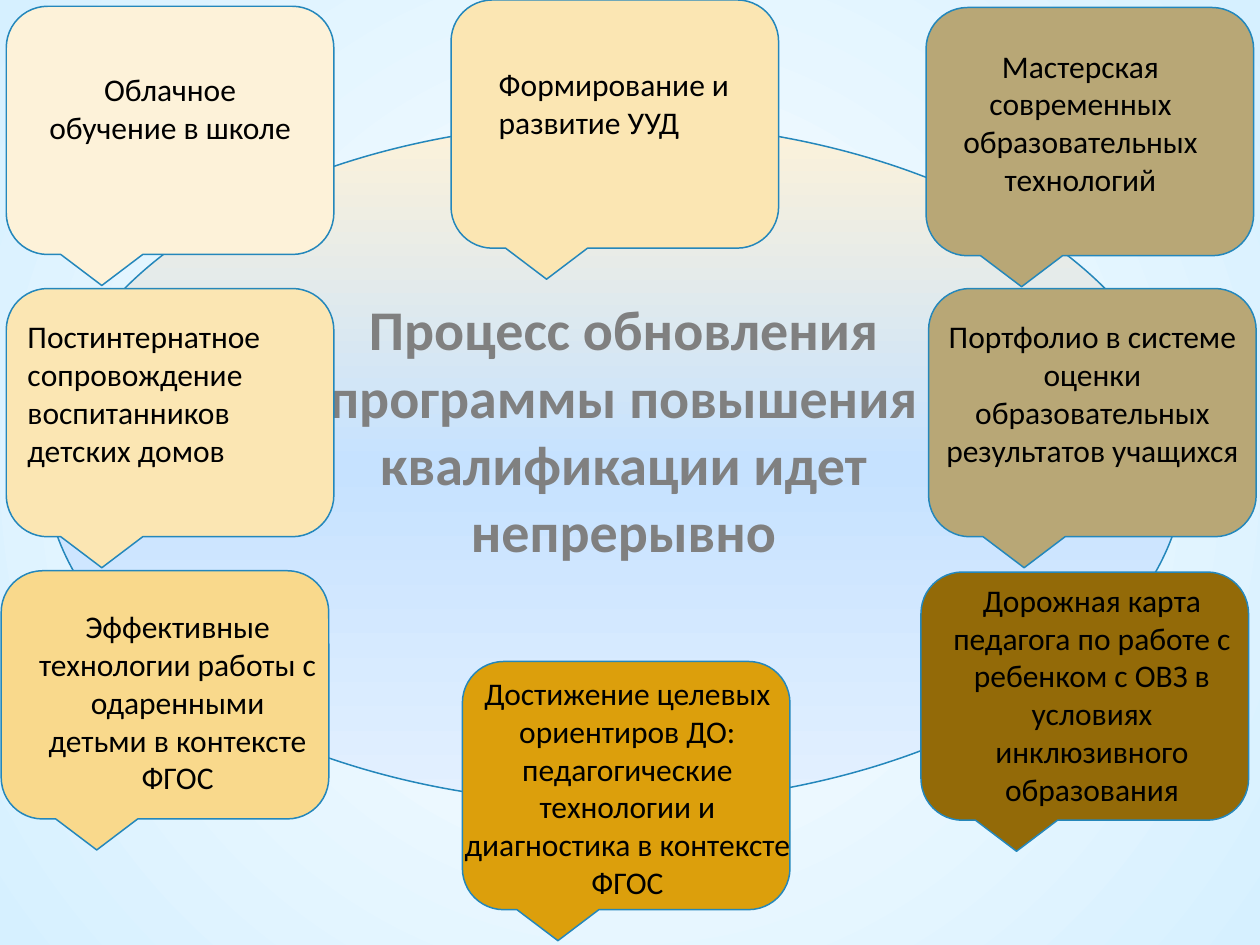
from lxml import etree
from pptx import Presentation
from pptx.dml.color import RGBColor
from pptx.enum.shapes import MSO_SHAPE
from pptx.enum.text import MSO_ANCHOR, MSO_AUTO_SIZE, PP_ALIGN
from pptx.oxml.ns import qn
from pptx.util import Pt

ELLIPSE = MSO_SHAPE.OVAL
CALLOUT = MSO_SHAPE.ROUNDED_RECTANGULAR_CALLOUT
TOP = MSO_ANCHOR.TOP
NO_FIT = MSO_AUTO_SIZE.NONE
LEFT, CENTER = PP_ALIGN.LEFT, PP_ALIGN.CENTER
TITLE_ONLY = 5

COLORS = {
    "white": "FFFFFF", "sky": "D6F0FF", "blue": "C6E2FF", "pale_blue": "E3F0FF",
    "line": "2487BB", "title": "808080", "text": "000000",
    "cream": "FDF2D9", "sand": "FBE6B3", "honey": "F9D98C",
    "khaki": "B8A776", "amber": "DC9F0C", "brown": "936A08",
}
CALLOUT_SIZE = (187.2, 141.84)
TITLE_FORMAT = {"name": "Calibri", "size": Pt(32), "bold": True}
TEXT_FORMAT = {"name": "Calibri", "size": Pt(18), "bold": False}

TITLE = "Процесс обновления программы повышения квалификации идет непрерывно"
TOPICS = [
    ("cream", (3.6, 3.6), (15.12, 36.72, 164.16, 51.12), CENTER,
     "Облачное обучение в школе"),
    ("sand", (3.6, 164.88), (8.64, 177.84, 158.4, 94.32), LEFT,
     "Постинтернатное сопровождение воспитанников детских домов"),
    ("honey", (0.72, 326.16), (15.12, 343.44, 172.8, 116.64), CENTER,
     "Эффективные технологии работы с одаренными детьми в контексте ФГОС"),
    ("sand", (257.76, 0), (277.92, 33.84, 147.6, 51.12), LEFT,
     "Формирование и развитие УУД"),
    ("amber", (264.24, 378), (257.76, 381.6, 201.6, 138.24), CENTER,
     "Достижение целевых ориентиров ДО: педагогические технологии "
     "и диагностика в контексте ФГОС"),
    ("khaki", (529.2, 4.32), (518.4, 23.04, 198, 94.32), CENTER,
     "Мастерская современных образовательных технологий"),
    ("khaki", (530.64, 164.88), (533.52, 177.84, 181.44, 116.64), CENTER,
     "Портфолио в системе оценки образовательных результатов учащихся"),
    ("brown", (526.32, 326.88), (533, 328.32, 182, 138.24), CENTER,
     "Дорожная карта педагога по работе с ребенком с ОВЗ в условиях "
     "инклюзивного образования"),
]


def rgb(name):
    return RGBColor.from_string(COLORS[name])


def set_gradient(fill, root, stops, radial=False):
    fill.gradient()
    grad = root.find(".//" + qn("a:gradFill"))
    for child in list(grad):
        grad.remove(child)
    gs_list = etree.SubElement(grad, qn("a:gsLst"))
    for pos, color in stops:
        gs = etree.SubElement(gs_list, qn("a:gs"), pos=str(pos * 1000))
        etree.SubElement(gs, qn("a:srgbClr"), val=COLORS[color])
    if radial:
        circle = etree.SubElement(grad, qn("a:path"), path="circle")
        etree.SubElement(circle, qn("a:fillToRect"), l="50000", t="50000",
                         r="50000", b="50000")
    else:
        etree.SubElement(grad, qn("a:lin"), ang="5400000", scaled="0")


def add_outlined(s, kind, box):
    sp = s.shapes.add_shape(kind, *map(Pt, box))
    sp.shadow.inherit = False
    sp.line.color.rgb = rgb("line")
    sp.line.width = Pt(0.85)
    return sp


def write_text(sp, text, align, color, font_format):
    tf = sp.text_frame
    tf.word_wrap = True
    tf.auto_size = NO_FIT
    tf.vertical_anchor = TOP
    p = tf.paragraphs[0]
    p.alignment = align
    r = p.add_run()
    r.text = text
    for key, value in font_format.items():
        setattr(r.font, key, value)
    r.font.color.rgb = rgb(color)


def add_title(s, box):
    sp = s.shapes.title
    for key, value in zip(("left", "top", "width", "height"), box):
        setattr(sp, key, Pt(value))
    write_text(sp, TITLE, CENTER, "title", TITLE_FORMAT)
    return sp


def add_topic(s, color, corner, text_box, align, text):
    sp = add_outlined(s, CALLOUT, corner + CALLOUT_SIZE)
    sp.fill.solid()
    sp.fill.fore_color.rgb = rgb(color)
    label = s.shapes.add_textbox(*map(Pt, text_box))
    write_text(label, text, align, "text", TEXT_FORMAT)


def main():
    prs = Presentation()
    prs.slide_width, prs.slide_height = Pt(720), Pt(540)
    s = prs.slides.add_slide(prs.slide_layouts[TITLE_ONLY])
    set_gradient(s.background.fill, s.element,
                 [(0, "white"), (100, "sky")], radial=True)
    ellipse = add_outlined(s, ELLIPSE, (25.2, 69.84, 652.32, 389.52))
    set_gradient(ellipse.fill, ellipse.element,
                 [(0, "cream"), (50, "blue"), (100, "pale_blue")])
    title = add_title(s, (179.28, 164.88, 354.24, 184.32))
    ellipse.element.addnext(title.element)
    for topic in TOPICS:
        add_topic(s, *topic)
    prs.save("out.pptx")


if __name__ == "__main__":
    main()
